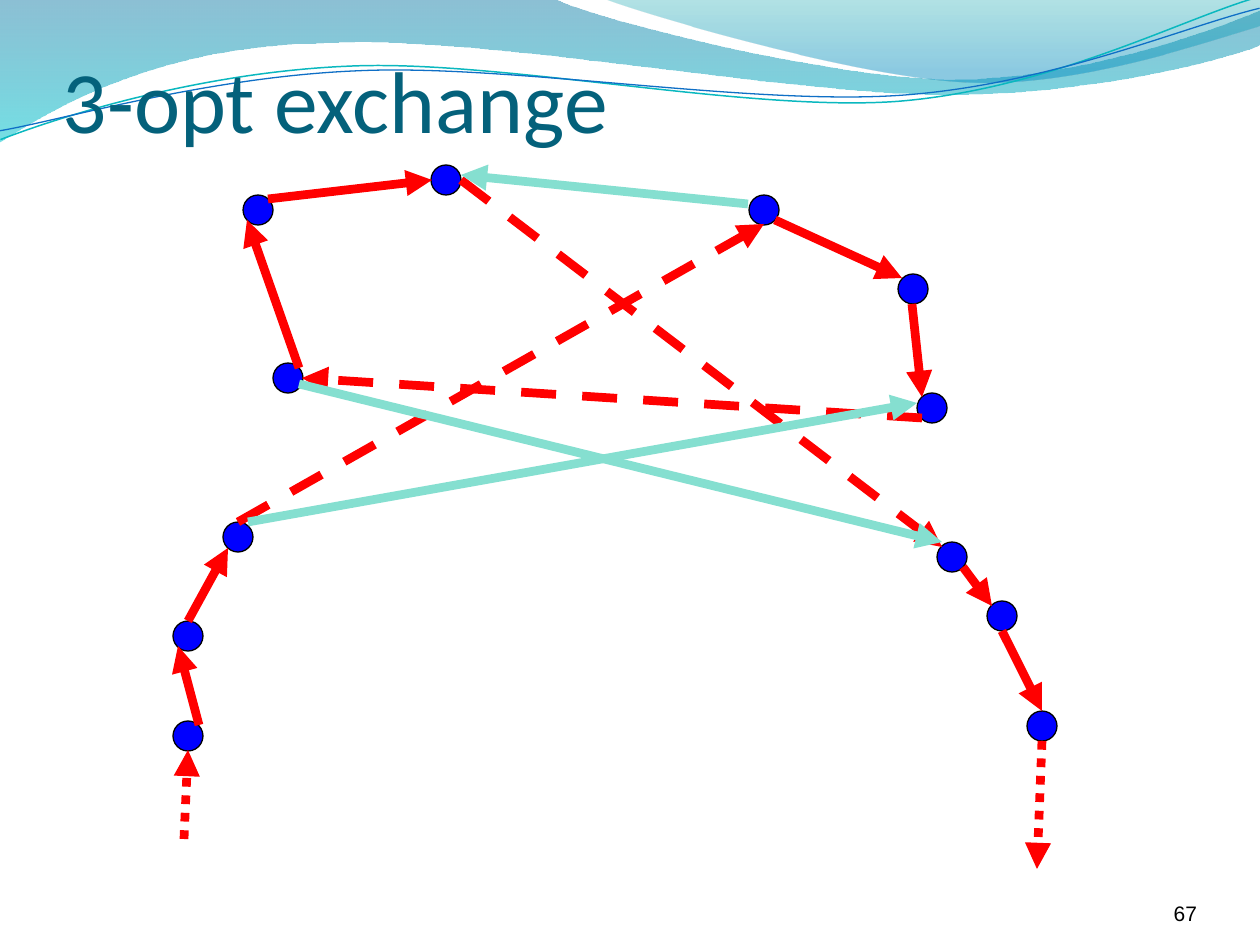
from typing import NamedTuple

from lxml.etree import SubElement
from pptx import Presentation
from pptx.dml.color import RGBColor
from pptx.enum.dml import MSO_LINE_DASH_STYLE as Dash
from pptx.enum.shapes import MSO_CONNECTOR, MSO_SHAPE
from pptx.enum.text import MSO_ANCHOR, PP_ALIGN
from pptx.oxml.ns import qn
from pptx.util import Emu, Pt

EMU_PER_PX = 914400 / 126
NODE_SIZE = 30
STRAND_TILT = -2.7

BLACK = RGBColor(0x00, 0x00, 0x00)
TITLE_TEAL = RGBColor(0x04, 0x61, 0x7B)
NODE_BLUE = RGBColor(0x00, 0x00, 0xFF)
TOUR_RED = RGBColor(0xFF, 0x00, 0x00)
EXCHANGE_MINT = RGBColor(0x85, 0xDF, 0xD0)
WAVE_BLUE = RGBColor(0x00, 0x74, 0xA1)
WAVE_CYAN = RGBColor(0x00, 0xC6, 0xCF)
CREST_TEAL = RGBColor(0x00, 0xA1, 0xA9)
CREST_BLUE = RGBColor(0x00, 0x8B, 0xBF)
STRAND_TEAL = RGBColor(0x0A, 0xB8, 0xBF)
STRAND_BLUE = RGBColor(0x0F, 0x6F, 0xC6)

Point = tuple[int, int]


class Outline(NamedTuple):
    """A start point, then segments of one point (line) or three (Bezier curve)."""
    start: Point
    segments: list[tuple[Point, ...]]


class Stop(NamedTuple):
    position: float
    color: RGBColor
    opacity: int


class Wave(NamedTuple):
    outline: Outline
    stops: tuple[Stop, Stop]


class Strand(NamedTuple):
    outline: Outline
    color: RGBColor
    width: float


class Link(NamedTuple):
    start: Point
    end: Point
    color: RGBColor = TOUR_RED
    dash: Dash | None = None


class Label(NamedTuple):
    text: str
    frame: tuple[int, int, int, int]
    font: str
    size: int
    color: RGBColor
    align: PP_ALIGN = PP_ALIGN.LEFT


WAVES = [
    Wave(Outline((0, 0), [
        ((554, -1),),
        ((600, 21), (837, 79), (955, 79)),
        ((1075, 79), (1207, 33), (1260, 11)),
        ((1261, 45),),
        ((1239, 55), (1096, 96), (940, 94)),
        ((784, 94), (481, 35), (324, 43)),
        ((163, 45), (58, 105), (-1, 142)),
        ((0, 0),),
    ]), (Stop(0, WAVE_BLUE, 45), Stop(1, WAVE_CYAN, 55))),
    Wave(Outline((604, -1), [
        ((641, 14), (859, 78), (969, 82)),
        ((1079, 87), (1211, 40), (1260, 26)),
        ((1260, 0),),
        ((604, -1),),
    ]), (Stop(0, CREST_TEAL, 30), Stop(0.8, CREST_BLUE, 45))),
]
STRANDS = [
    Strand(Outline((-2, 110), [
        ((58, 90), (200, 52), (350, 53)),
        ((499, 53), (745, 118), (896, 114)),
        ((1049, 109), (1184, 45), (1260, 27)),
    ]), STRAND_TEAL, 0.85),
    Strand(Outline((-2, 101), [
        ((57, 94), (207, 57), (358, 58)),
        ((509, 58), (750, 112), (902, 108)),
        ((1052, 104), (1188, 52), (1262, 38)),
    ]), STRAND_BLUE, 0.75),
]
LABELS = [
    Label("67", (1092, 876, 105, 50), "Arial", 12, BLACK, PP_ALIGN.RIGHT),
    Label("3-opt exchange", (63, -6, 1134, 157), "Calibri", 50, TITLE_TEAL),
]
OUTER_NODES = [
    (764, 210), (913, 289), (932, 408), (1042, 726), (1002, 616),
    (188, 636), (188, 736), (238, 537), (952, 557),
]
OUTER_LINKS = [
    Link((199, 725), (178, 646)),
    Link((188, 621), (228, 548)),
    Link((238, 522), (764, 224), dash=Dash.DASH),
    Link((963, 567), (992, 606)),
    Link((1002, 631), (1042, 711)),
    Link((1042, 741), (1037, 869), dash=Dash.ROUND_DOT),
    Link((184, 839), (188, 750), dash=Dash.ROUND_DOT),
]
UPPER_LEFT_NODES = [(288, 378), (258, 210), (446, 180)]
EXCHANGE_LINKS = [
    Link((461, 180), (942, 547), dash=Dash.DASH),
    Link((268, 199), (432, 180)),
    Link((299, 368), (247, 220)),
    Link((775, 220), (902, 278)),
    Link((912, 304), (922, 397)),
    Link((922, 418), (302, 378), dash=Dash.DASH),
    Link((248, 522), (917, 403), EXCHANGE_MINT),
    Link((748, 204), (461, 175), EXCHANGE_MINT),
    Link((299, 384), (942, 542), EXCHANGE_MINT),
]


def px(length: float) -> Emu:
    return Emu(round(length * EMU_PER_PX))


def add_outline(page, outline: Outline, close: bool):
    """Lay out every point as a line, then merge each Bezier triple into one curve."""
    builder = page.shapes.build_freeform(*map(px, outline.start))
    builder.add_line_segments(
        [(px(x), px(y)) for segment in outline.segments for x, y in segment], close=close)
    shape = builder.convert_to_shape()
    shape.shadow.inherit = False
    lines = iter(list(shape.element.spPr.iter(qn("a:lnTo"))))
    for segment in outline.segments:
        steps = [next(lines) for _ in segment]
        if len(steps) == 3:
            curve = SubElement(steps[0].getparent(), qn("a:cubicBezTo"))
            steps[0].addprevious(curve)
            for step in steps:
                curve.append(step[0])
                step.getparent().remove(step)
    return shape


def add_wave(page, wave: Wave) -> None:
    shape = add_outline(page, wave.outline, close=True)
    shape.line.fill.background()
    shape.fill.gradient()
    shape.fill.gradient_angle = 270
    for stop, wanted in zip(shape.fill.gradient_stops, wave.stops):
        stop.position = wanted.position
        stop.color.rgb = wanted.color
    colors = shape.element.spPr.iter(qn("a:srgbClr"))
    for color, wanted in zip(list(colors), wave.stops):
        SubElement(color, qn("a:alpha"), val=str(wanted.opacity * 1000))


def add_strand(page, strand: Strand) -> None:
    shape = add_outline(page, strand.outline, close=False)
    shape.rotation = STRAND_TILT
    shape.fill.background()
    shape.line.color.rgb = strand.color
    shape.line.width = Pt(strand.width)


def add_label(page, label: Label) -> None:
    frame = page.shapes.add_textbox(*map(px, label.frame)).text_frame
    frame.word_wrap = True
    frame.vertical_anchor = MSO_ANCHOR.BOTTOM
    frame.margin_left = frame.margin_top = frame.margin_right = frame.margin_bottom = 0
    para = frame.paragraphs[0]
    para.alignment = label.align
    span = para.add_run()
    span.text = label.text
    span.font.name = label.font
    span.font.size = Pt(label.size)
    span.font.color.rgb = label.color


def add_node(page, center: Point) -> None:
    left, top = (px(value - NODE_SIZE / 2) for value in center)
    node = page.shapes.add_shape(MSO_SHAPE.OVAL, left, top, px(NODE_SIZE), px(NODE_SIZE))
    node.shadow.inherit = False
    node.fill.solid()
    node.fill.fore_color.rgb = NODE_BLUE
    node.line.color.rgb = BLACK
    node.line.width = Pt(0.75)


def add_link(page, link: Link) -> None:
    arrow = page.shapes.add_connector(
        MSO_CONNECTOR.STRAIGHT, *map(px, link.start + link.end))
    arrow.line.color.rgb = link.color
    arrow.line.width = Pt(5)
    if link.dash:
        arrow.line.dash_style = link.dash
    properties = arrow.element.spPr
    SubElement(properties.find(qn("a:ln")), qn("a:tailEnd"), type="triangle")
    SubElement(properties, qn("a:effectLst"))


def main() -> None:
    deck = Presentation()
    deck.slide_width, deck.slide_height = px(1260), px(945)
    page = deck.slides.add_slide(deck.slide_layouts[6])
    for draw, items in ((add_wave, WAVES), (add_strand, STRANDS), (add_label, LABELS),
                        (add_node, OUTER_NODES), (add_link, OUTER_LINKS),
                        (add_node, UPPER_LEFT_NODES), (add_link, EXCHANGE_LINKS)):
        for item in items:
            draw(page, item)
    deck.save("out.pptx")


if __name__ == "__main__":
    main()
